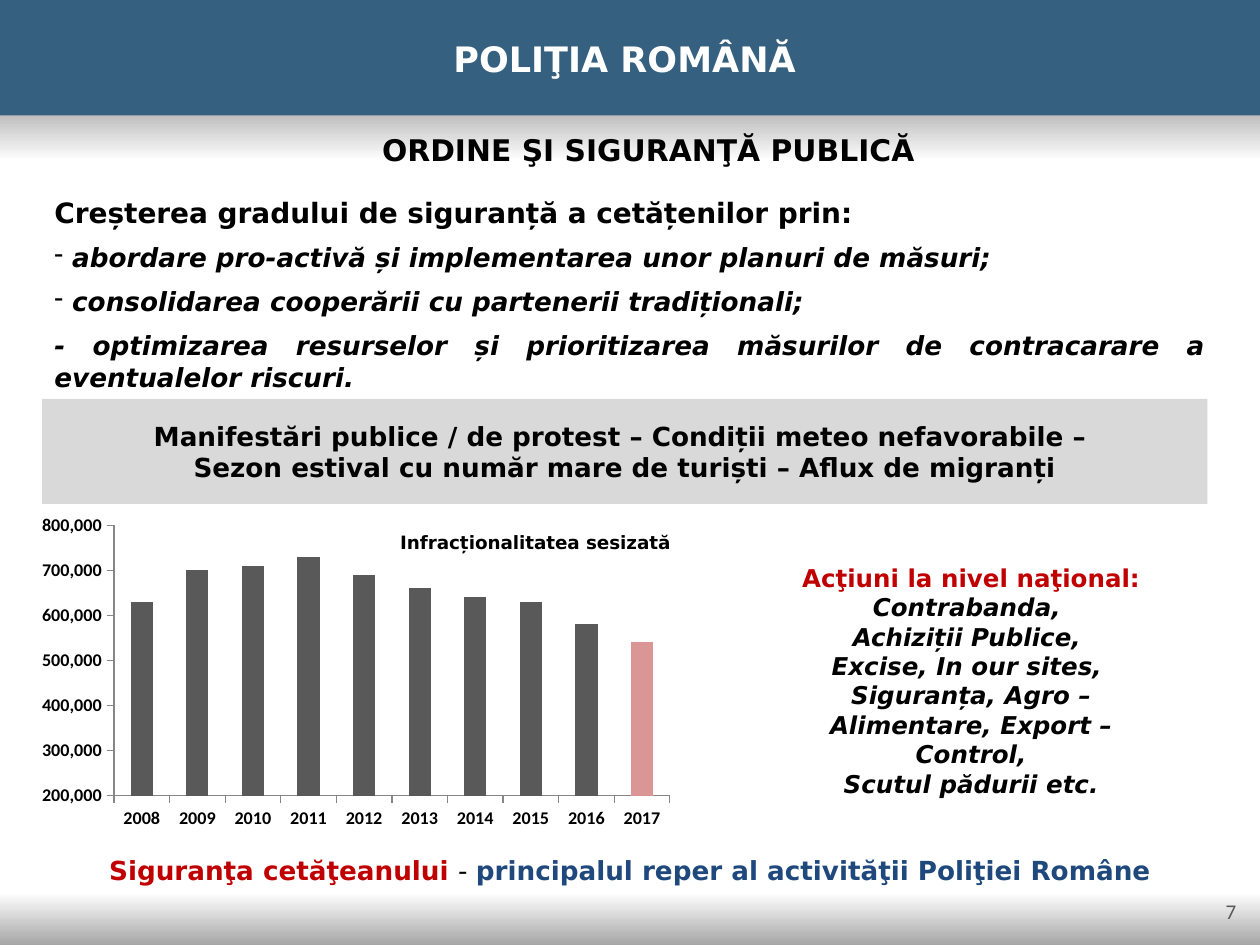
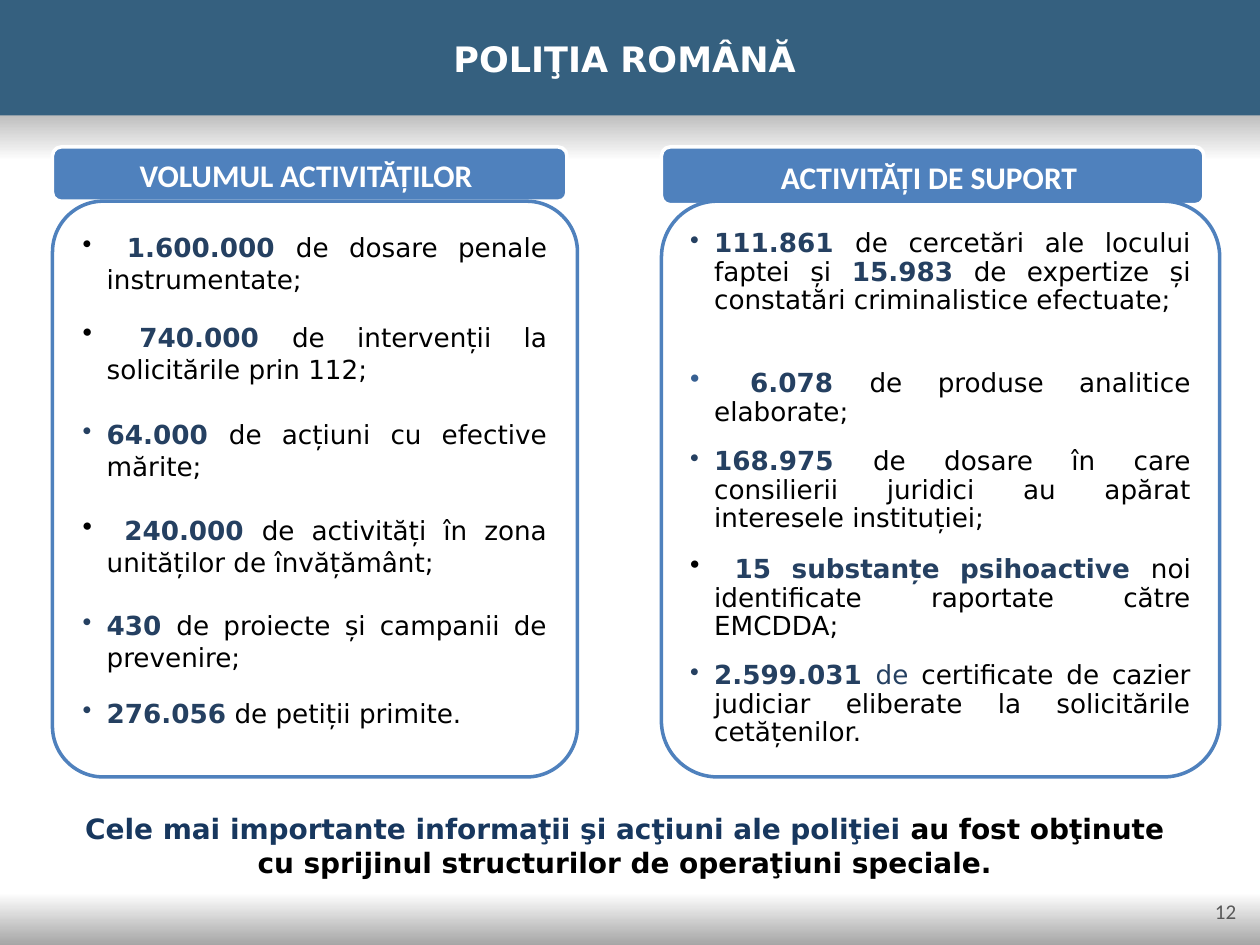
from dataclasses import dataclass
from typing import NamedTuple

from lxml.etree import SubElement
from pptx import Presentation
from pptx.chart.data import CategoryChartData
from pptx.dml.color import RGBColor
from pptx.enum.chart import XL_CHART_TYPE as ChartType, XL_TICK_MARK as TickMark
from pptx.enum.shapes import MSO_SHAPE as Preset
from pptx.enum.text import MSO_ANCHOR as Anchor, PP_ALIGN as Align
from pptx.oxml.ns import qn
from pptx.shapes.autoshape import Shape
from pptx.slide import Slide
from pptx.text.text import Font, TextFrame
from pptx.util import Pt

WHITE = RGBColor(0xFF, 0xFF, 0xFF)
BLACK = RGBColor(0, 0, 0)
BAND_BLUE = RGBColor(0x35, 0x60, 0x7F)
TAB_BLUE = RGBColor(0x4F, 0x81, 0xBD)
FIGURE_BLUE = RGBColor(0x25, 0x40, 0x61)
BULLET_BLUE = RGBColor(0x37, 0x60, 0x92)
MOTTO_BLUE = RGBColor(0x1F, 0x49, 0x7D)
CLOSING_BLUE = RGBColor(0x17, 0x37, 0x5E)
RED = RGBColor(0xC0, 0, 0)
PINK = RGBColor(0xD9, 0x96, 0x94)
BAR_GREY = RGBColor(0x59, 0x59, 0x59)
AXIS_GREY = RGBColor(0x86, 0x86, 0x86)
PALE_GREY = RGBColor(0xD9, 0xD9, 0xD9)
SHADE = RGBColor(0xBF, 0xBF, 0xBF)
DEEP_SHADE = RGBColor(0xA6, 0xA6, 0xA6)
SANS, CALIBRI = "DejaVu Sans", "Calibri"


class Box(NamedTuple):
    """Left, top, width and height in points."""
    left: float
    top: float
    width: float
    height: float

    def lengths(self) -> list[Pt]:
        """Give the four lengths as Pt values."""
        return [Pt(value) for value in self]


class Span(NamedTuple):
    """A piece of text with what differs from its paragraph."""
    text: str
    color: RGBColor | None = None
    bold: bool | None = None
    italic: bool | None = None
    size: float | None = None


@dataclass
class Para:
    """A paragraph with the font its spans share."""
    spans: list[Span]
    size: float = 15
    color: RGBColor | None = BLACK
    bold: bool | None = True
    italic: bool | None = None
    font: str = SANS
    align: Align = Align.CENTER
    before: float = 0
    line: float | None = None
    bullet: str = ""
    hang: float = 0


@dataclass
class Panel:
    """A titled rounded panel with a list of figures."""
    title: str
    tab: Box
    frame: Box
    radius: float
    inset: float
    items: list[Para]


def set_font(font: Font, style: Span | Para) -> None:
    """Apply the given parts of a style to a font."""
    if style.size:
        font.size = Pt(style.size)
    if style.color is not None:
        font.color.rgb = style.color
    if style.bold is not None:
        font.bold = style.bold
    if style.italic is not None:
        font.italic = style.italic


def write(frame: TextFrame, paras: list[Para], anchor: Anchor = Anchor.TOP,
          insets: tuple[float, float, float, float] = (7.2, 3.6, 7.2, 3.6)) -> None:
    """Fill a text frame with paragraphs."""
    frame.word_wrap = True
    frame.vertical_anchor = anchor
    (frame.margin_left, frame.margin_top,
     frame.margin_right, frame.margin_bottom) = [Pt(inset) for inset in insets]
    for index, para in enumerate(paras):
        target = frame.add_paragraph() if index else frame.paragraphs[0]
        if para.bullet:
            properties = target._p.get_or_add_pPr()
            properties.set("marL", str(Pt(para.hang)))
            properties.set("indent", str(-Pt(para.hang)))
            SubElement(properties, qn("a:buChar"), char=para.bullet)
        target.alignment = para.align
        target.space_before = Pt(para.before)
        if para.line:
            target.line_spacing = para.line
        target.font.name = para.font
        set_font(target.font, para)
        for span in para.spans:
            run = target.add_run()
            run.text = span.text
            set_font(run.font, span)


def add_text(page: Slide, box: Box, paras: list[Para], anchor: Anchor = Anchor.TOP) -> None:
    """Add a wrapping text box."""
    write(page.shapes.add_textbox(*box.lengths()).text_frame, paras, anchor)


def add_block(page: Slide, box: Box, fill: RGBColor, line: RGBColor | None = None,
              radius: float = 0) -> Shape:
    """Add a flat rectangle, rounded when a radius is given."""
    block = page.shapes.add_shape(
        Preset.ROUNDED_RECTANGLE if radius else Preset.RECTANGLE, *box.lengths())
    block.shadow.inherit = False
    block.fill.solid()
    block.fill.fore_color.rgb = fill
    if radius:
        block.adjustments[0] = radius / min(box.width, box.height)
    if line is None:
        block.line.fill.background()
    else:
        block.line.color.rgb = line
        block.line.width = Pt(2)
    return block


def add_fade(page: Slide, box: Box, upper: RGBColor, lower: RGBColor) -> None:
    """Add a band that fades downwards between two colours."""
    fill = add_block(page, box, upper).fill
    fill.gradient()
    fill.gradient_angle = 270
    for stop, color in zip(fill.gradient_stops, (upper, lower)):
        stop.color.rgb = color


def add_page(deck: Presentation, number: str) -> Slide:
    """Add a page with the shared bands, title and number."""
    page = deck.slides.add_slide(deck.slide_layouts[6])
    add_fade(page, Box(0, 510, 720, 30), WHITE, DEEP_SHADE)
    add_fade(page, Box(0, 66, 720, 26), SHADE, WHITE)
    add_text(page, Box(546.5, 506, 167, 29),
             [Para([Span(number)], 12, BAR_GREY, False, font=CALIBRI, align=Align.RIGHT)],
             Anchor.MIDDLE)
    add_block(page, Box(0, 0, 720, 66), BAND_BLUE)
    add_text(page, Box(156, 18, 402, 32), [Para([Span("POLIŢIA ROMÂNĂ")], 20, WHITE)])
    return page


def add_crime_chart(page: Slide, box: Box) -> None:
    """Add the column chart of reported offences by year."""
    data = CategoryChartData(number_format="#,##0")
    data.categories = [str(year) for year in range(2008, 2018)]
    thousands = (630, 700, 710, 730, 690, 660, 640, 630, 580, 540)
    data.add_series("Series 1", [value * 1000 for value in thousands])
    chart = page.shapes.add_chart(ChartType.COLUMN_CLUSTERED, *box.lengths(), data).chart
    chart.has_legend = False
    chart.has_title = False
    chart.font.name = CALIBRI
    chart.font.size = Pt(10.5)
    chart.font.bold = True
    chart.font.color.rgb = BLACK
    for axis in (chart.category_axis, chart.value_axis):
        axis.has_major_gridlines = False
        axis.major_tick_mark = TickMark.OUTSIDE
        axis.minor_tick_mark = TickMark.NONE
        axis.format.line.color.rgb = AXIS_GREY
    scale = chart.value_axis
    scale.minimum_scale, scale.maximum_scale, scale.major_unit = 200000, 800000, 100000
    scale.tick_labels.number_format = "#,##0"
    scale.tick_labels.number_format_is_linked = False
    plot = chart.plots[0]
    plot.vary_by_categories = False
    plot.gap_width = 150
    bars = plot.series[0]
    bars.format.fill.solid()
    bars.format.fill.fore_color.rgb = BAR_GREY
    latest = bars.points[9].format.fill
    latest.solid()
    latest.fore_color.rgb = PINK
    area = chart._chartSpace.chart.plotArea
    for old in area.findall(qn("c:layout")):
        area.remove(old)
    layout = SubElement(area, qn("c:layout"))
    area.insert(0, layout)
    manual = SubElement(layout, qn("c:manualLayout"))
    settings = {"layoutTarget": "inner", "xMode": "edge", "yMode": "edge",
                "x": "0.1", "y": "0.03", "w": "0.88", "h": "0.88"}
    for name, value in settings.items():
        SubElement(manual, qn(f"c:{name}"), val=value)


def build_safety_page(deck: Presentation) -> None:
    """Build the page on public order and safety."""
    page = add_page(deck, "7")
    add_text(page, Box(42, 72, 657, 28), [Para([Span("ORDINE ŞI SIGURANŢĂ PUBLICĂ")], 17)])
    add_crime_chart(page, Box(24, 294, 366, 180))
    actions = ["Achiziții Publice, ", "Excise, In our sites, ",
               "Siguranța, Agro – Alimentare, Export – Control,", "Scutul pădurii etc."]
    heading = Para([Span("Acţiuni la nivel naţional: ", RED), Span("Contrabanda, ", BLACK, italic=True)],
                   14, None)
    add_text(page, Box(450, 318, 210, 143),
             [heading] + [Para([Span(action)], 14, italic=True) for action in actions])
    measures = [("-", " abordare pro-activă și implementarea unor planuri de măsuri;"),
                ("-", " consolidarea cooperării cu partenerii tradiționali;"),
                ("", "- optimizarea resurselor și prioritizarea măsurilor de contracarare a "
                     "eventualelor riscuri.")]
    goal = Para([Span("Creșterea gradului de siguranță a cetățenilor prin:")], 16, align=Align.JUSTIFY)
    add_text(page, Box(24, 96, 672, 144),
             [goal] + [Para([Span(text)], italic=True, align=Align.JUSTIFY, before=7.2, bullet=bullet)
                       for bullet, text in measures], Anchor.MIDDLE)
    add_text(page, Box(192, 300, 228, 20), [Para([Span("Infracționalitatea sesizată")], 10.5)])
    add_text(page, Box(24, 484.5, 672, 25),
             [Para([Span("Siguranţa cetăţeanului ", RED, True), Span("- ", BLACK, False),
                    Span("principalul reper al activităţii Poliţiei Române", MOTTO_BLUE, True)],
                   color=None, bold=None)])
    events = add_block(page, Box(24, 228, 666, 60), PALE_GREY)
    write(events.text_frame,
          [Para([Span("Manifestări publice / de protest – Condiții meteo nefavorabile – ")]),
           Para([Span("Sezon estival cu număr mare de turiști – Aflux de migranți")])], Anchor.MIDDLE)


def figure(text: str) -> Span:
    """Give a highlighted figure."""
    return Span(text, FIGURE_BLUE, True)


def item(before: float, *spans: Span, line: float | None = None) -> Para:
    """Give a bulleted, justified list item."""
    return Para(list(spans), bold=False, align=Align.JUSTIFY, before=before,
                line=line, bullet="•", hang=13.7)


def add_panel(page: Slide, panel: Panel) -> None:
    """Draw a panel under its title tab."""
    tab = add_block(page, panel.tab, TAB_BLUE, WHITE, 5)
    write(tab.text_frame, [Para([Span(panel.title)], 18, WHITE, font=CALIBRI, line=0.9)],
          Anchor.MIDDLE, (0, 4, 0, 0))
    frame = add_block(page, panel.frame, WHITE, TAB_BLUE, panel.radius)
    write(frame.text_frame, panel.items, insets=(panel.inset,) * 4)


def build_activity_page(deck: Presentation) -> None:
    """Build the page on the volume of work and support."""
    page = add_page(deck, "12")
    space = Span(" ", size=16)
    volume = [
        item(0, Span(" "), figure("1.600.000 "), Span("de dosare penale instrumentate;")),
        item(14.4, space, figure("740.000 "), Span("de intervenții la solicitările prin 112;")),
        item(19.2, figure("64.000 "), Span("de acțiuni cu efective mărite; ")),
        item(18, space, figure("240.000 "), Span("de activități în zona unităților de învățământ;")),
        item(18, figure("430 "), Span("de proiecte și campanii de prevenire;")),
        item(14.4, figure("276.056"), Span(" de petiții primite.")),
    ]
    support = [
        item(0, figure("111.861 "), Span("de cercetări ale locului faptei și "), figure("15.983"),
             Span(" de expertize și constatări criminalistice efectuate;"), line=0.9),
        item(30.5, Span(" ", BULLET_BLUE, size=16), figure("6.078 "),
             Span("de produse analitice elaborate;"), line=0.9),
        item(12, figure("168.975 "),
             Span("de dosare în care consilierii juridici au apărat interesele instituției;"), line=0.9),
        item(12, space, figure("15 substanțe psihoactive "),
             Span("noi identificate raportate către EMCDDA;"), line=0.9),
        item(12, figure("2.599.031 "), Span("de", FIGURE_BLUE),
             Span(" certificate de cazier judiciar eliberate la solicitările cetățenilor."), line=0.9),
    ]
    for panel in (
        Panel("VOLUMUL ACTIVITĂȚILOR ", Box(30, 84, 294, 31), Box(30, 115, 300, 329), 29, 8.8, volume),
        Panel("ACTIVITĂȚI DE SUPORT ", Box(378, 84, 310, 33), Box(378, 115, 319, 329), 32, 7.2, support),
    ):
        add_panel(page, panel)
    add_text(page, Box(36, 456, 642, 54),
             [Para([Span("Cele mai importante informaţii şi acţiuni ale poliţiei ", CLOSING_BLUE),
                    Span("au fost obţinute cu sprijinul structurilor de operaţiuni speciale.", BLACK)],
                   16, None)], Anchor.MIDDLE)


def main() -> None:
    """Build and save the deck."""
    deck = Presentation()
    deck.slide_width, deck.slide_height = Pt(720), Pt(540)
    build_safety_page(deck)
    build_activity_page(deck)
    deck.save("out.pptx")


if __name__ == "__main__":
    main()
